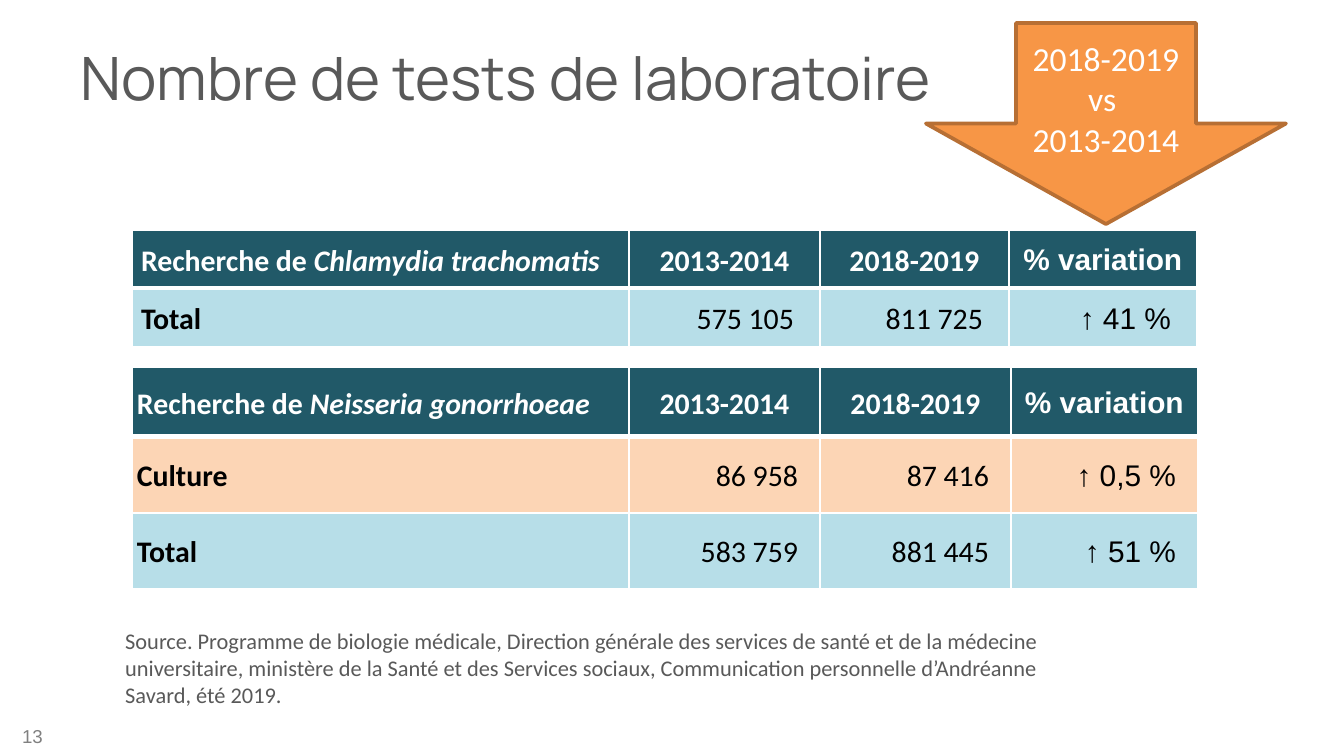
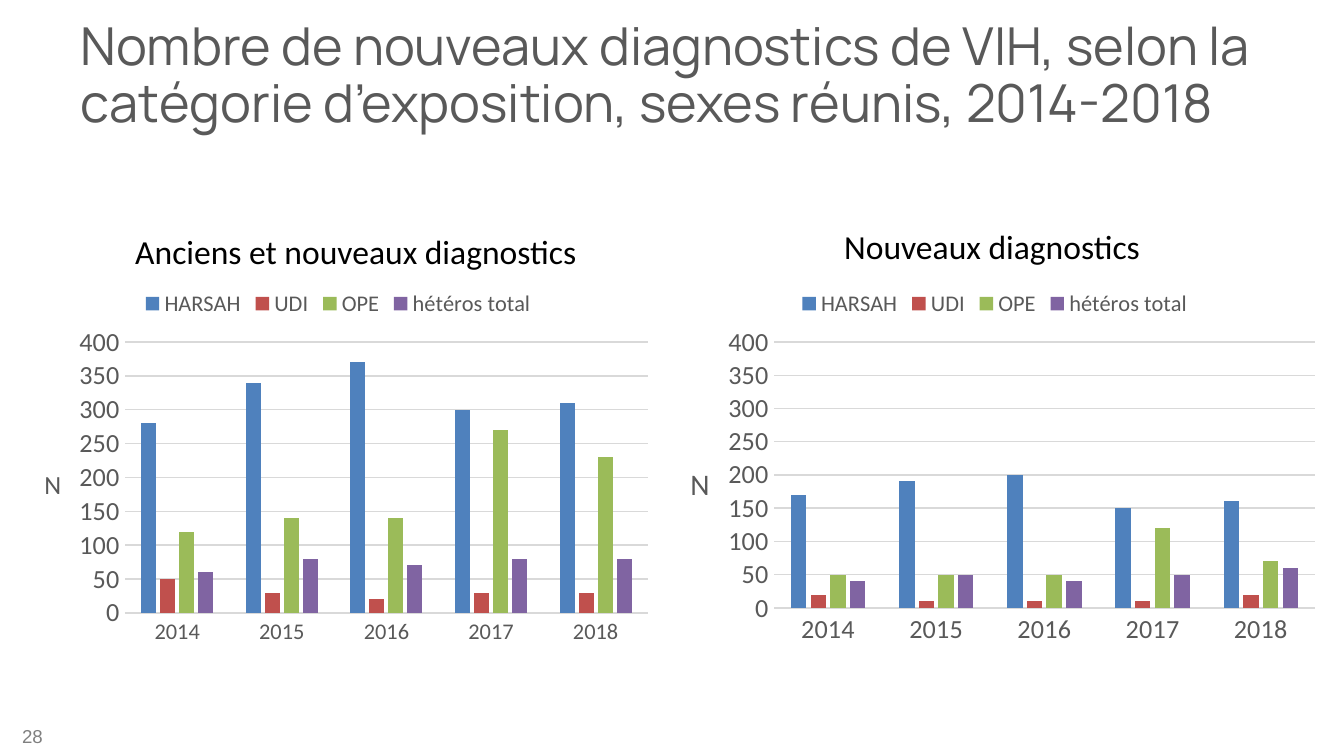
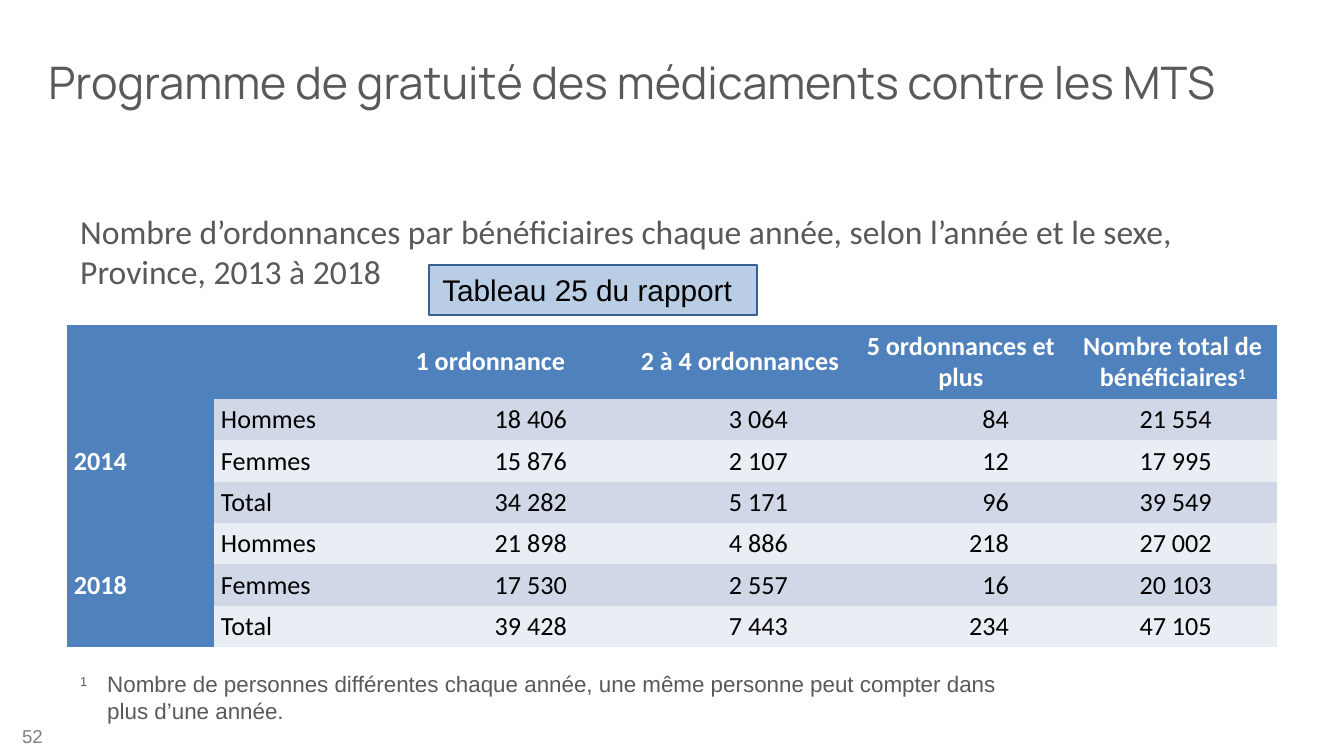
from lxml import etree
from pptx import Presentation
from pptx import util as u
from pptx.chart.data import CategoryChartData
from pptx.dml.color import RGBColor
from pptx.enum import chart as charts, shapes, text
from pptx.oxml.ns import qn

PX = 914400 / 134.4
SLIDE_SIZE = (1344, 756)

WHITE = RGBColor(0xFF, 0xFF, 0xFF)
BLACK = RGBColor(0, 0, 0)
DARK_GREY = RGBColor(0x59, 0x59, 0x59)
MID_GREY = RGBColor(0x80, 0x80, 0x80)
LIGHT_GREY = RGBColor(0xD9, 0xD9, 0xD9)
TEAL = RGBColor(0x21, 0x59, 0x68)
PALE_TEAL = RGBColor(0xB7, 0xDE, 0xE8)
PEACH = RGBColor(0xFC, 0xD5, 0xB5)
ORANGE = RGBColor(0xF7, 0x96, 0x46)
BROWN = RGBColor(0xB7, 0x6F, 0x34)
BLUE = RGBColor(0x4F, 0x81, 0xBD)
RED = RGBColor(0xC0, 0x50, 0x4D)
GREEN = RGBColor(0x9B, 0xBB, 0x59)
PURPLE = RGBColor(0x80, 0x64, 0xA2)
BAND_DARK = RGBColor(0xD0, 0xD8, 0xE8)
BAND_LIGHT = RGBColor(0xE9, 0xED, 0xF4)
LABEL_BLUE = RGBColor(0xB9, 0xCD, 0xE5)
NAVY = RGBColor(0x37, 0x60, 0x92)

TITLE_FONT, BODY_FONT, PLAIN_FONT = "Manrope", "Calibri", "Arial"
TITLE_BOX = (67, 14, 1210, 126)
NO_TABLE_STYLE = "{2D5ABB26-0587-4C30-8999-92F81FD0307C}"
LEFT, CENTER, RIGHT = text.PP_ALIGN.LEFT, text.PP_ALIGN.CENTER, text.PP_ALIGN.RIGHT
MIDDLE = text.MSO_ANCHOR.MIDDLE

YEARS = ("2014", "2015", "2016", "2017", "2018")
EXPOSURES = (("HARSAH", BLUE), ("UDI", RED), ("OPE", GREEN), ("hétéros total", PURPLE))
ALL_DIAGNOSES = ((280, 340, 370, 300, 310), (50, 30, 20, 30, 30),
                 (120, 140, 140, 270, 230), (60, 80, 70, 80, 80))
NEW_DIAGNOSES = ((170, 190, 200, 150, 160), (20, 10, 10, 10, 20),
                 (50, 50, 50, 120, 70), (40, 50, 40, 50, 60))

PRESCRIPTION_HEADS = ("1 ordonnance", "2 à 4 ordonnances", "5 ordonnances et plus",
                      "Nombre total de bénéficiaires")
PRESCRIPTIONS = (
    ("2014", "Hommes", "18 406", "3 064", "84", "21 554"),
    ("", "Femmes", "15 876", "2 107", "12", "17 995"),
    ("", "Total", "34 282", "5 171", "96", "39 549"),
    ("2018", "Hommes", "21 898", "4 886", "218", "27 002"),
    ("", "Femmes", "17 530", "2 557", "16", "20 103"),
    ("", "Total", "39 428", "7 443", "234", "47 105"),
)


def px(value):
    return u.Emu(round(value * PX))


def style_font(font, size, color, name=BODY_FONT, bold=False):
    font.size, font.name, font.bold = u.Pt(size), name, bold
    font.color.rgb = color


def superscript(run):
    run.font._element.set("baseline", "30000")


def add_slide(presentation, title, size, number, box=TITLE_BOX, line_spacing=None):
    slide = presentation.slides.add_slide(presentation.slide_layouts[5])
    shape = slide.shapes.title
    shape.left, shape.top, shape.width, shape.height = map(px, box)
    frame = shape.text_frame
    frame.text, frame.vertical_anchor = title, MIDDLE
    frame.auto_size = text.MSO_AUTO_SIZE.NONE
    paragraph = frame.paragraphs[0]
    paragraph.alignment, paragraph.line_spacing = LEFT, line_spacing
    style_font(paragraph.font, size, DARK_GREY, TITLE_FONT)
    footer = add_text(slide, (-9, 716, 65, 40), str(number), 10, MID_GREY, PLAIN_FONT)
    footer.text_frame.vertical_anchor = MIDDLE
    footer.text_frame.paragraphs[0].alignment = RIGHT
    return slide


def add_text(slide, box, content, size, color=DARK_GREY, name=BODY_FONT):
    shape = slide.shapes.add_textbox(*map(px, box))
    frame = shape.text_frame
    frame.word_wrap, frame.text = True, content
    style_font(frame.paragraphs[0].font, size, color, name)
    return shape


def add_label_shape(slide, kind, box, fill, line, width, lines, size, color, name, alignment):
    shape = slide.shapes.add_shape(kind, *map(px, box))
    shape.shadow.inherit = False
    shape.fill.solid()
    shape.fill.fore_color.rgb = fill
    shape.line.color.rgb, shape.line.width = line, u.Pt(width)
    frame = shape.text_frame
    frame.word_wrap, frame.vertical_anchor = True, MIDDLE
    frame.text = "\n".join(lines)
    for paragraph in frame.paragraphs:
        paragraph.alignment = alignment
        style_font(paragraph.font, size, color, name)


def add_table(slide, left, top, widths, heights):
    box = (left, top, sum(widths), sum(heights))
    table = slide.shapes.add_table(len(heights), len(widths), *map(px, box)).table
    table.horz_banding = False
    table._tbl.tblPr.find(qn("a:tableStyleId")).text = NO_TABLE_STYLE
    for column, width in zip(table.columns, widths):
        column.width = px(width)
    for row, height in zip(table.rows, heights):
        row.height = px(height)
    return table


def add_borders(cell, **widths):
    """Draw white edges; widths are points for L, R, T and B, in that order."""
    properties = cell._tc.get_or_add_tcPr()
    for side, width in widths.items():
        line = etree.SubElement(properties, qn(f"a:ln{side}"), w=str(u.Pt(width)))
        fill = etree.SubElement(line, qn("a:solidFill"))
        etree.SubElement(fill, qn("a:srgbClr"), val=str(WHITE))


def fill_cell(cell, color):
    cell.fill.solid()
    cell.fill.fore_color.rgb = color


def write_cell(cell, content, size, color, margins, alignment=LEFT, name=BODY_FONT,
               bold=False, right_indent=0):
    cell.text, cell.vertical_anchor = content, MIDDLE
    cell.margin_left, cell.margin_top, cell.margin_right, cell.margin_bottom = map(px, margins)
    paragraph = cell.text_frame.paragraphs[0]
    paragraph.alignment = alignment
    if right_indent:
        paragraph._p.get_or_add_pPr().set("marR", str(px(right_indent)))
    style_font(paragraph.font, size, color, name, bold)
    return paragraph


def add_test_table(slide, top, widths, heights, margins, germ, rows):
    """Rows are (fill, label, values...)."""
    table = add_table(slide, 132, top, widths, heights)
    header = (TEAL, "Recherche de ", "2013-2014", "2018-2019", "% variation")
    for row_index, (fill, *values) in enumerate((header, *rows)):
        is_header = row_index == 0
        for column_index, value in enumerate(values):
            cell = table.cell(row_index, column_index)
            is_label = column_index == 0
            alignment = LEFT if is_label else CENTER if is_header else RIGHT
            add_borders(cell, L=1, R=1, T=3 if row_index == 1 else 1, B=3 if is_header else 1)
            fill_cell(cell, fill)
            paragraph = write_cell(
                cell, value, 16, WHITE if is_header else BLACK, margins, alignment,
                PLAIN_FONT if column_index == 3 else BODY_FONT, is_header or is_label,
                17 if alignment == RIGHT else 0)
            paragraph.line_spacing = 1.1
            if is_header and is_label:
                run = paragraph.add_run()
                run.text, run.font.italic = germ, True


def add_prescription_table(slide):
    table = add_table(slide, 67, 325, (147, 140, 278, 221, 221, 203), (74,) + (41,) * 6)
    margins = (7, 5, 12, 5)
    for column_index in range(6):
        cell = table.cell(0, column_index)
        fill_cell(cell, BLUE)
        if column_index >= 2:
            paragraph = write_cell(cell, PRESCRIPTION_HEADS[column_index - 2], 14, WHITE,
                                   margins, CENTER, bold=True)
    mark = paragraph.add_run()
    mark.text = "1"
    superscript(mark)
    for row_index, (year, sex, *counts) in enumerate(PRESCRIPTIONS, 1):
        year_cell = table.cell(row_index, 0)
        fill_cell(year_cell, BLUE)
        if year:
            year_cell.merge(table.cell(row_index + 2, 0))
            write_cell(year_cell, year, 14, WHITE, margins, bold=True)
        for column_index, value in enumerate((sex, *counts), 1):
            cell = table.cell(row_index, column_index)
            fill_cell(cell, BAND_DARK if row_index % 2 else BAND_LIGHT)
            is_count = column_index > 1
            write_cell(cell, value, 14, BLACK, margins, RIGHT if is_count else LEFT,
                       right_indent=53 if is_count else 0)


def make_layout(inner=False, **fractions):
    """Return a manual chart layout from x, y and optionally w and h."""
    layout = etree.Element(qn("c:layout"))
    manual = etree.SubElement(layout, qn("c:manualLayout"))
    if inner:
        etree.SubElement(manual, qn("c:layoutTarget"), val="inner")
    for axis in "xy":
        etree.SubElement(manual, qn(f"c:{axis}Mode"), val="edge")
    for key, fraction in fractions.items():
        etree.SubElement(manual, qn(f"c:{key}"), val=str(round(fraction, 4)))
    return layout


def drop_layout(element):
    for layout in element.findall(qn("c:layout")):
        element.remove(layout)


def add_diagnosis_chart(slide, box, plot_box, values, year_size, unit_size):
    data = CategoryChartData(number_format="0")
    data.categories = YEARS
    for (name, _), counts in zip(EXPOSURES, values):
        data.add_series(name, counts)
    chart = slide.shapes.add_chart(charts.XL_CHART_TYPE.COLUMN_CLUSTERED,
                                   *map(px, box), data).chart
    style_font(chart.font, 10, BLACK)
    chart.has_title = False
    plot = chart.plots[0]
    plot.gap_width, plot.overlap, plot.vary_by_categories = 219, -27, False
    for series, (_, color) in zip(plot.series, EXPOSURES):
        series.format.fill.solid()
        series.format.fill.fore_color.rgb = color

    years, counts = chart.category_axis, chart.value_axis
    for axis, size in ((years, year_size), (counts, 14)):
        axis.major_tick_mark = axis.minor_tick_mark = charts.XL_TICK_MARK.NONE
        style_font(axis.tick_labels.font, size, DARK_GREY)
    counts.minimum_scale, counts.maximum_scale, counts.major_unit = 0, 400, 50
    counts.tick_labels.number_format = "0"
    counts.tick_labels.number_format_is_linked = False
    counts.format.line.fill.background()
    counts.has_major_gridlines = True
    for line in (years.format.line, counts.major_gridlines.format.line):
        line.color.rgb, line.width = LIGHT_GREY, u.Pt(0.75)
    frame = counts.axis_title.text_frame
    frame.text = "N"
    frame._txBody.find(qn("a:bodyPr")).set("rot", "0")
    style_font(frame.paragraphs[0].font, unit_size, DARK_GREY)

    left, top, width, height = box
    plot_left, plot_top, plot_width, plot_height = plot_box
    chart.has_legend = True
    legend = chart.legend
    legend.position = charts.XL_LEGEND_POSITION.TOP
    legend.include_in_layout = False
    style_font(legend.font, 12, DARK_GREY)
    drop_layout(legend._element)
    legend._element.find(qn("c:legendPos")).addnext(
        make_layout(x=(width - 400) / 2 / width, y=14 / height))
    plot_area = chart._chartSpace.chart.plotArea
    drop_layout(plot_area)
    plot_area.insert(0, make_layout(
        inner=True, x=(plot_left - left) / width, y=(plot_top - top) / height,
        w=plot_width / width, h=plot_height / height))


def add_footnote(slide, box, mark, content):
    shape = add_text(slide, box, mark, 12, DARK_GREY, PLAIN_FONT)
    paragraph = shape.text_frame.paragraphs[0]
    superscript(paragraph.runs[0])
    paragraph.add_run().text = "\t" + content
    paragraph.space_after = u.Pt(12)
    indent = px(27)
    properties = paragraph._p.get_or_add_pPr()
    properties.set("marL", str(indent))
    properties.set("indent", str(-indent))
    tabs = etree.Element(qn("a:tabLst"))
    etree.SubElement(tabs, qn("a:tab"), pos=str(indent), algn="l")
    properties.find(qn("a:defRPr")).addprevious(tabs)


def build_test_slide(presentation):
    slide = add_slide(presentation, "Nombre de tests de laboratoire", 32, 13)
    add_test_table(slide, 230, (497, 191, 189, 188), (58, 59), (9, 0, 9, 0),
                   "Chlamydia trachomatis",
                   ((PALE_TEAL, "Total", "575 105", "811 725", "↑ 41 %"),))
    add_test_table(slide, 367, (497, 191, 191, 187), (70, 76, 76), (5, 5, 5, 5),
                   "Neisseria gonorrhoeae",
                   ((PEACH, "Culture", "86 958", "87 416", "↑ 0,5 %"),
                    (PALE_TEAL, "Total", "583 759", "881 445", "↑ 51 %")))
    add_text(slide, (112, 621, 1008, 95),
             "Source. Programme de biologie médicale, Direction générale des services de santé "
             "et de la médecine universitaire, ministère de la Santé et des Services sociaux, "
             "Communication personnelle d’Andréanne Savard, été 2019.", 12)
    add_label_shape(slide, shapes.MSO_SHAPE.DOWN_ARROW, (926, 23, 360, 201), ORANGE, BROWN, 2,
                    ("2018-2019 vs ", "2013-2014"), 18, WHITE, BODY_FONT, CENTER)


def build_diagnosis_slide(presentation):
    slide = add_slide(presentation,
                      "Nombre de nouveaux diagnostics de VIH, selon la catégorie "
                      "d’exposition, sexes réunis, 2014-2018", 28, 28, line_spacing=0.9)
    add_text(slide, (831, 219, 327, 54), "Nouveaux diagnostics", 18, BLACK)
    add_text(slide, (122, 224, 474, 54), "Anciens et nouveaux diagnostics", 18, BLACK)
    add_diagnosis_chart(slide, (661, 271, 668, 382), (774, 342, 541, 266),
                        NEW_DIAGNOSES, 14, 16)
    add_diagnosis_chart(slide, (16, 271, 645, 382), (125, 342, 523, 271),
                        ALL_DIAGNOSES, 12, 14)


def build_prescription_slide(presentation):
    slide = add_slide(presentation, "Programme de gratuité des médicaments contre les MTS",
                      24, 52, (35, 19, 1219, 126))
    add_prescription_table(slide)
    add_footnote(slide, (67, 664, 985, 67), "1",
                 "Nombre de personnes différentes chaque année, une même personne peut "
                 "compter dans plus d’une année.")
    add_text(slide, (67, 204, 1187, 95),
             "Nombre d’ordonnances par bénéficiaires chaque année, selon l’année et le sexe, "
             "Province, 2013 à 2018", 18)
    add_label_shape(slide, shapes.MSO_SHAPE.RECTANGLE, (429, 265, 328, 50), LABEL_BLUE, NAVY,
                    0.75, ("Tableau 25 du rapport",), 16, BLACK, PLAIN_FONT, LEFT)


def main():
    presentation = Presentation()
    presentation.slide_width, presentation.slide_height = map(px, SLIDE_SIZE)
    build_test_slide(presentation)
    build_diagnosis_slide(presentation)
    build_prescription_slide(presentation)
    presentation.save("out.pptx")


if __name__ == "__main__":
    main()
